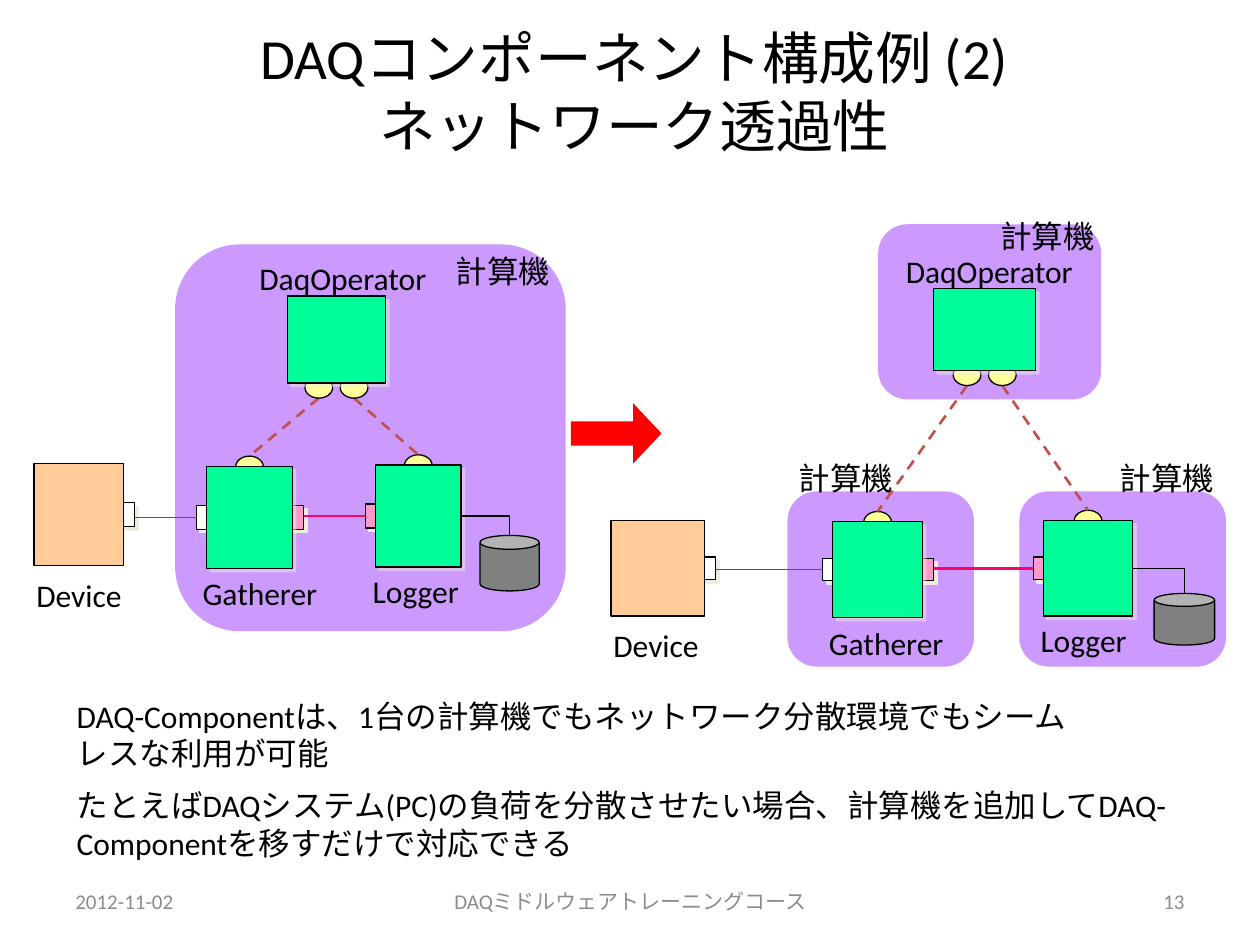
from lxml import etree
from pptx import Presentation
from pptx import util as u
from pptx.dml.color import RGBColor
from pptx.enum import dml, shapes, text
from pptx.oxml.ns import qn

COLORS = {
    "machine": "CC99FF", "component": "00FF99", "device": "FFCC99",
    "service": "FFFF99", "data_port": "FF99CC", "device_port": "FFFFFF",
    "disk": "808080", "arrow": "FF0000", "data": "FF0066",
    "command": "C0504D", "black": "000000", "footer": "8C8C8C",
    "shadow": "EEECE1",
}
FONT = "Calibri"
CAP_W, CAP_H = 0.22, 0.17
PORT_W = 0.16
CAP_OFFSET = 0.14


def rgb(name):
    return RGBColor.from_string(COLORS[name])


class Box:
    def __init__(self, left, top, width, height):
        self.at = (left, top, width, height)
        self.left, self.top = left, top
        self.right, self.bottom = left + width, top + height
        self.center = left + width / 2
        self.middle = top + height / 2
        self.port_h = 0.235 * height


class SlideBuilder:
    def __init__(self, slide):
        self.slide = slide

    def fill_text(self, shape, content, size=18, color="black", align=None):
        tf = shape.text_frame
        tf.text = content
        for p in tf.paragraphs:
            p.font.name, p.font.size = FONT, u.Pt(size)
            p.font.color.rgb = rgb(color)
            if align is not None:
                p.alignment = align
        return tf

    def title(self, at, content):
        sp = self.slide.shapes.title
        sp.left, sp.top, sp.width, sp.height = map(u.Inches, at)
        tf = self.fill_text(sp, content, 32.4, align=text.PP_ALIGN.CENTER)
        tf.auto_size = text.MSO_AUTO_SIZE.NONE
        tf.vertical_anchor = text.MSO_ANCHOR.MIDDLE

    def text(self, at, content, wrap=True, **style):
        sp = self.slide.shapes.add_textbox(*map(u.Inches, at))
        tf = self.fill_text(sp, content, **style)
        tf.word_wrap = wrap
        return tf

    def label(self, left, top, width, content):
        tf = self.text((left, top, width, 0.4), content, wrap=False)
        tf.auto_size = text.MSO_AUTO_SIZE.SHAPE_TO_FIT_TEXT

    def footer(self, left, width, content, align):
        tf = self.text((left, 6.95, width, 0.4), content,
                       size=12, color="footer", align=align)
        tf.vertical_anchor = text.MSO_ANCHOR.MIDDLE

    def shape(self, kind, at, fill, outline=True, shadow=None):
        """Add a preset shape; shadow is the shadow's opacity in percent."""
        sp = self.slide.shapes.add_shape(kind, *map(u.Inches, at))
        sp.shadow.inherit = False
        sp.fill.solid()
        sp.fill.fore_color.rgb = rgb(fill)
        if outline:
            sp.line.color.rgb = rgb("black")
            sp.line.width = u.Pt(0.75)
        else:
            sp.line.fill.background()
        if shadow:
            effects = sp._element.spPr.find(qn("a:effectLst"))
            outer = etree.SubElement(effects, qn("a:outerShdw"), dist=str(int(u.Pt(2.8))),
                                     dir="2700000", algn="ctr", rotWithShape="0")
            clr = etree.SubElement(outer, qn("a:srgbClr"), val=COLORS["shadow"])
            etree.SubElement(clr, qn("a:alpha"), val=str(shadow * 1000))
        return sp

    def line(self, start, end, color, width=0.75, dashed=False, bent=False):
        kind = shapes.MSO_CONNECTOR.ELBOW if bent else shapes.MSO_CONNECTOR.STRAIGHT
        line = self.slide.shapes.add_connector(kind, *map(u.Inches, (*start, *end)))
        line.line.color.rgb = rgb(color)
        line.line.width = u.Pt(width)
        if dashed:
            line.line.dash_style = dml.MSO_LINE.DASH
        sp_pr = line._element.spPr
        if bent:
            sp_pr.find(qn("a:prstGeom")).set("prst", "bentConnector2")
        etree.SubElement(sp_pr, qn("a:effectLst"))

    def machine(self, *at):
        sp = self.shape(shapes.MSO_SHAPE.ROUNDED_RECTANGLE, at, "machine", outline=False)
        sp.adjustments[0] = 0.167

    def component(self, box, fill="component", left_port=None, right_port=None, caps=()):
        """Draw a box in front of its ports and its (centre x, top) service caps."""
        for x, port in ((box.left - 0.08, left_port), (box.right - 0.07, right_port)):
            if port:
                at = (x, box.middle - box.port_h / 2, PORT_W, box.port_h)
                self.shape(shapes.MSO_SHAPE.RECTANGLE, at, port, shadow=100)
        for x, y in caps:
            self.shape(shapes.MSO_SHAPE.OVAL, (x - CAP_W / 2, y, CAP_W, CAP_H), "service")
        self.shape(shapes.MSO_SHAPE.RECTANGLE, box.at, fill,
                   shadow=50 if fill == "component" else None)

    def system(self, operator, gatherer, logger, device, disk):
        """Draw the four components, the disk, their links and their labels."""
        tops = [(b.center, b.top - 0.08) for b in (gatherer, logger)]
        bottoms = [(operator.center + d, operator.bottom - 0.05)
                   for d in (-CAP_OFFSET, CAP_OFFSET)]

        self.component(logger, left_port="data_port", caps=tops[1:])
        self.component(gatherer, left_port="device_port", right_port="data_port",
                       caps=tops[:1])
        self.component(device, "device", right_port="device_port")
        for (x, y), top in zip(bottoms, tops):
            self.line((x, y + CAP_H), top, "command", 1.5, dashed=True)
        self.component(operator, caps=bottoms)

        for source, target, width in ((gatherer, logger, 1.5), (device, gatherer, 0.75)):
            y = target.middle
            self.line((source.right + 0.09, y), (target.left - 0.08, y), "data", width)
        self.shape(shapes.MSO_SHAPE.CAN, disk.at, "disk")
        self.line((logger.right, logger.middle), (disk.center, disk.top),
                  "black", bent=True)

        self.label(operator.left - 0.32, operator.top - 0.34, 1.65, "DaqOperator")
        self.label(gatherer.left - 0.13, gatherer.bottom, 1.19, "Gatherer")
        self.label(logger.left - 0.12, logger.bottom - 0.01, 0.98, "Logger")
        self.label(device.left - 0.08, device.bottom + 0.03, 0.97, "Device")


def main():
    prs = Presentation()
    prs.slide_width, prs.slide_height = u.Inches(10), u.Inches(7.5)
    s = SlideBuilder(prs.slides.add_slide(prs.slide_layouts[5]))

    s.title((0.27, 0.21, 9.53, 1.02), "DAQコンポーネント構成例 (2)\vネットワーク透過性")

    s.machine(1.39, 1.94, 3.1, 3.07)
    s.system(operator=Box(2.28, 2.35, 0.78, 0.69), gatherer=Box(1.64, 3.7, 0.68, 0.81),
             logger=Box(2.98, 3.69, 0.68, 0.81), device=Box(0.27, 3.68, 0.71, 0.81),
             disk=Box(3.81, 4.25, 0.47, 0.44))

    s.machine(8.09, 3.9, 1.64, 1.39)
    s.machine(6.25, 3.9, 1.48, 1.39)
    s.machine(6.97, 1.78, 1.77, 1.39)
    s.system(operator=Box(7.41, 2.29, 0.81, 0.65), gatherer=Box(6.61, 4.14, 0.71, 0.76),
             logger=Box(8.28, 4.13, 0.71, 0.76), device=Box(4.85, 4.13, 0.74, 0.76),
             disk=Box(9.16, 4.71, 0.48, 0.41))

    arrow = s.shape(shapes.MSO_SHAPE.RIGHT_ARROW, (4.53, 3.2, 0.72, 0.48),
                    "arrow", outline=False)
    arrow.adjustments[0], arrow.adjustments[1] = 0.4, 0.47

    for left, top in ((7.84, 1.67), (3.52, 1.95), (6.24, 3.59), (8.79, 3.59)):
        s.label(left, top, 0.96, "計算機")

    s.text((0.51, 5.48, 8.28, 0.7),
           "DAQ-Componentは、1台の計算機でもネットワーク分散環境でもシームレスな利用が可能")
    s.text((0.51, 6.19, 9.49, 0.7),
           "たとえばDAQシステム(PC)の負荷を分散させたい場合、"
           "計算機を追加してDAQ-Componentを移すだけで対応できる")

    s.footer(0.5, 2.33, "2012-11-02", text.PP_ALIGN.LEFT)
    s.footer(3.42, 3.17, "DAQミドルウェアトレーニングコース", text.PP_ALIGN.CENTER)
    s.footer(7.17, 2.33, "13", text.PP_ALIGN.RIGHT)

    prs.save("out.pptx")


if __name__ == "__main__":
    main()
